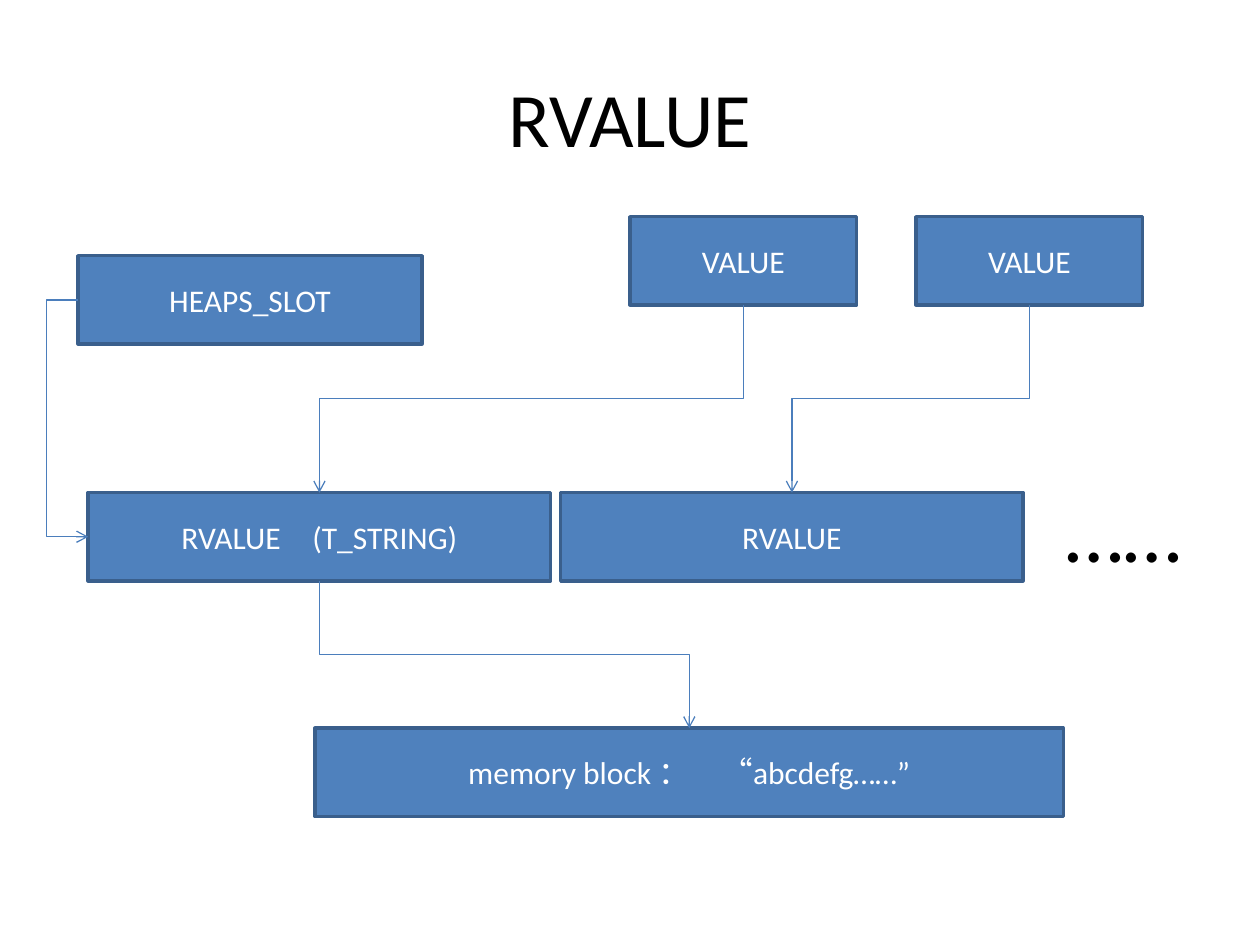
from pptx import Presentation
from pptx.dml.color import RGBColor
from pptx.enum.shapes import MSO_CONNECTOR, MSO_SHAPE
from pptx.enum.text import MSO_ANCHOR, PP_ALIGN
from pptx.oxml.ns import qn
from pptx.util import Inches, Pt
from lxml.etree import SubElement

BLUE = RGBColor(0x4F, 0x81, 0xBD)
EDGE = RGBColor(0x3A, 0x5F, 0x8C)
WIRE = RGBColor(0x4B, 0x7E, 0xBC)
WHITE = RGBColor(0xFF, 0xFF, 0xFF)
BLACK = RGBColor(0, 0, 0)
HIGH = 0.7  # height of every box


def write(shape, text, size=18, color=WHITE, align=PP_ALIGN.CENTER,
          anchor=MSO_ANCHOR.MIDDLE):
    frame = shape.text_frame
    frame.word_wrap = True
    frame.vertical_anchor = anchor
    para = frame.paragraphs[0]
    para.alignment = align
    run = para.add_run()
    run.text = text
    run.font.name = "Calibri"
    run.font.size = Pt(size)
    run.font.color.rgb = color


def add_box(slide, text, left, top, width):
    """Draw a labelled box and return its left, top and width."""
    box = slide.shapes.add_shape(MSO_SHAPE.RECTANGLE, Inches(left), Inches(top),
                                 Inches(width), Inches(HIGH))
    box.shadow.inherit = False
    box.fill.solid()
    box.fill.fore_color.rgb = BLUE
    box.line.color.rgb = EDGE
    box.line.width = Pt(2)
    write(box, text)
    return left, top, width


def add_elbow(slide, x1, y1, x2, y2, turn=0, bend=0.5):
    """Draw a bent arrow; turn is in degrees, bend a share of its width."""
    wire = slide.shapes.add_connector(MSO_CONNECTOR.ELBOW, Inches(x1), Inches(y1),
                                      Inches(x2), Inches(y2))
    wire.line.color.rgb = WIRE
    wire.line.width = Pt(0.75)
    props = wire._element.spPr
    SubElement(wire.line._get_or_add_ln(), qn("a:tailEnd"), type="arrow")
    SubElement(props, qn("a:effectLst"))
    props.find(qn("a:xfrm")).set("rot", str(turn * 60000))
    guides = props.find(qn("a:prstGeom")).get_or_add_avLst()
    SubElement(guides, qn("a:gd"), name="adj1", fmla=f"val {round(bend * 100000)}")


def add_drop(slide, upper, lower):
    """Lead from the bottom centre of one box to the top centre of another."""
    x1, y1 = upper[0] + upper[2] / 2, upper[1] + HIGH
    x2, y2 = lower[0] + lower[2] / 2, lower[1]
    # The elbow starts sideways, so lay it flat about its centre and turn it
    mid_x, mid_y = (x1 + x2) / 2, (y1 + y2) / 2
    half_w, half_h = (y2 - y1) / 2, abs(x2 - x1) / 2
    right = x2 > x1
    if right:
        half_w = -half_w
    add_elbow(slide, mid_x - half_w, mid_y - half_h, mid_x + half_w,
              mid_y + half_h, turn=270 if right else 90)


def add_loop(slide, upper, lower, reach=0.25):
    """Lead from the left side of one box round to the left of another."""
    x1, x2 = upper[0], lower[0]
    add_elbow(slide, x1, upper[1] + HIGH / 2, x2, lower[1] + HIGH / 2,
              bend=-reach / (x2 - x1))


def main():
    deck = Presentation()
    deck.slide_width, deck.slide_height = Inches(10), Inches(7.5)
    slide = deck.slides.add_slide(deck.slide_layouts[5])

    # Title
    title = slide.shapes.title
    title.left, title.top = Inches(0.5), Inches(0.3)
    title.width, title.height = Inches(9), Inches(1.25)
    write(title, "RVALUE", size=44, color=BLACK)

    # Boxes
    heap = add_box(slide, "HEAPS_SLOT", 0.62, 2.03, 2.73)
    values = [add_box(slide, "VALUE", x, 1.72, 1.8) for x in (5, 7.27)]
    cells = [add_box(slide, text, x, 3.91, 3.67)
             for text, x in (("RVALUE　(T_STRING)", 0.7), ("RVALUE", 4.45))]
    block = add_box(slide, "memory block ：　“abcdefg……”", 2.5, 5.78, 5.94)

    # Arrows
    add_drop(slide, cells[0], block)
    for value, cell in zip(values, cells):
        add_drop(slide, value, cell)
    add_loop(slide, heap, cells[0])

    # Further cells
    more = slide.shapes.add_textbox(Inches(8.36), Inches(3.75), Inches(1.13),
                                    Inches(0.91))
    write(more, "……", size=48, color=BLACK, align=PP_ALIGN.LEFT,
          anchor=MSO_ANCHOR.TOP)
    more.text_frame.word_wrap = False

    deck.save("out.pptx")


if __name__ == "__main__":
    main()
